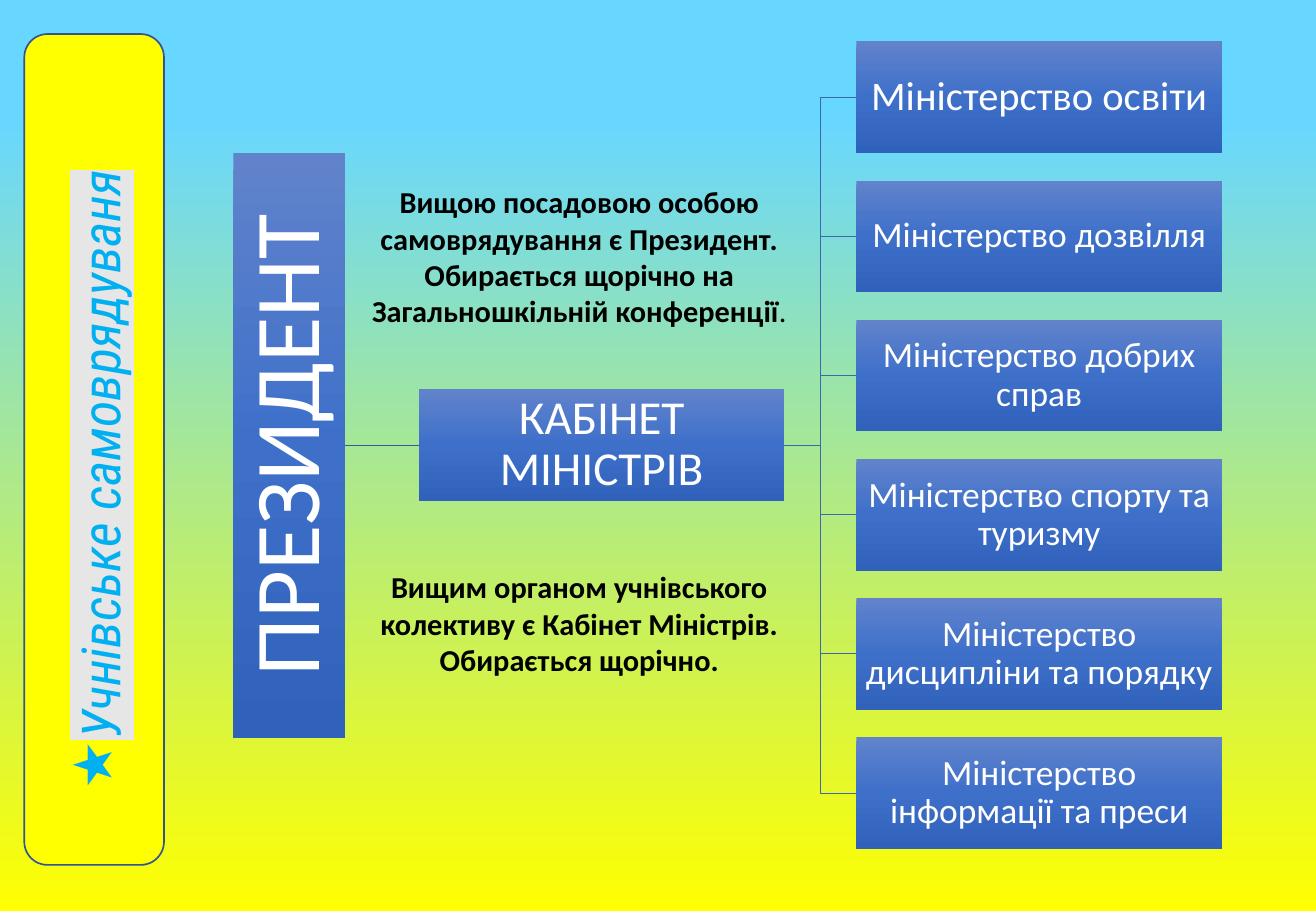
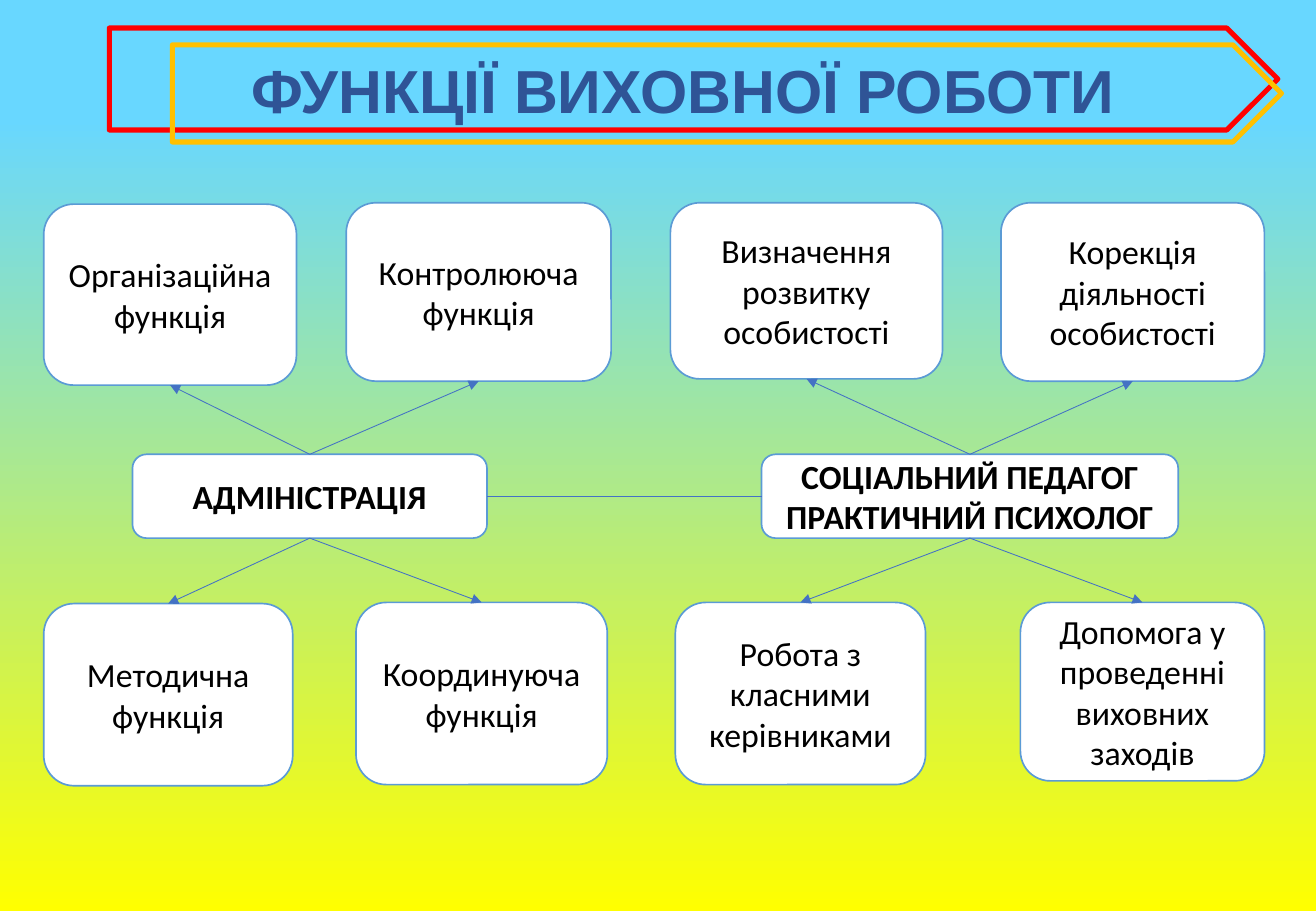
from dataclasses import dataclass

import pptx
import pptx.dml.color
import pptx.enum.dml
import pptx.enum.shapes
import pptx.enum.text
import pptx.oxml.ns
import pptx.oxml.xmlchemy
import pptx.shapes.autoshape
import pptx.shapes.connector
import pptx.slide
import pptx.text.text
import pptx.util
from lxml import etree

Pt = pptx.util.Pt
qn = pptx.oxml.ns.qn
SHAPE = pptx.enum.shapes.MSO_SHAPE
CONNECTOR = pptx.enum.shapes.MSO_CONNECTOR
ALIGN = pptx.enum.text.PP_ALIGN
ANCHOR = pptx.enum.text.MSO_ANCHOR

SKY, YELLOW, WHITE, BLACK = "68D7FF", "FFFF00", "FFFFFF", "000000"
BACKGROUND_STOPS = [(13, SKY), (100, YELLOW)]
BLOCK_STOPS = [(0, "6183CB"), (50, "3E70CA"), (100, "3062BB")]
TITLE_BLUE, BRIGHT_BLUE, HIGHLIGHT = "2F5496", "00B0F0", "E7E6E6"
CARD_LINE, ARROW_LINE = "5B9BD5", "4472C4"
TOP, LEFT, BOTTOM, RIGHT = range(4)  # connection sites of a rectangle


@dataclass(frozen=True)
class Box:
    left: float
    top: float
    width: float
    height: float

    def lengths(self) -> list[pptx.util.Length]:
        return [Pt(value) for value in (self.left, self.top, self.width, self.height)]


@dataclass(frozen=True)
class TextStyle:
    size: float
    color: str
    bold: bool = False
    italic: bool = False
    font: str = "Calibri"
    align: ALIGN = ALIGN.CENTER
    spacing: float = 1.0


@dataclass(frozen=True)
class Card:
    box: Box
    lines: tuple[str, ...]
    hub_site: int


@dataclass(frozen=True)
class Hub:
    box: Box
    lines: tuple[str, ...]
    cards: tuple[Card, ...]


BODY = TextStyle(18, BLACK, bold=True)
CARD_TEXT = TextStyle(20, BLACK)
HUB_TEXT = TextStyle(20, BLACK, bold=True)

MINISTRIES = [
    ("Міністерство освіти", 24),
    ("Міністерство дозвілля", 21),
    ("Міністерство добрих справ", 21),
    ("Міністерство спорту та туризму", 21),
    ("Міністерство дисципліни та порядку", 21),
    ("Міністерство інформації та преси", 21),
]
BLOCK_WIDTH, BLOCK_HEIGHT = 216.7, 66.2
MINISTRY_LEFT, MINISTRY_TOP, MINISTRY_STEP = 507.6, 24.5, 82.5
MIDDLE_TOP = MINISTRY_TOP + MINISTRY_STEP * (len(MINISTRIES) - 1) / 2

HUBS = [
    Hub(Box(78.5, 269.3, 210.2, 49.7), ("АДМІНІСТРАЦІЯ",), (
        Card(Box(25.9, 121, 149.8, 107.3), ("Організаційна функція",), TOP),
        Card(Box(205.2, 120.2, 157, 105.8), ("Контролююча", "функція"), TOP),
        Card(Box(25.9, 357.8, 147.6, 108), ("Методична функція",), BOTTOM),
        Card(Box(211, 357.1, 149, 108), ("Координуюча", "функція"), BOTTOM),
    )),
    Hub(Box(451.4, 269.3, 247, 49.7), ("СОЦІАЛЬНИЙ ПЕДАГОГ", "ПРАКТИЧНИЙ ПСИХОЛОГ"), (
        Card(Box(397.4, 120.2, 161.3, 104.4), ("Визначення розвитку особистості",), TOP),
        Card(Box(593.3, 120.2, 156.2, 105.8), ("Корекція діяльності особистості",), TOP),
        Card(Box(400.3, 357.1, 148.3, 108), ("Робота з класними керівниками",), BOTTOM),
        Card(Box(604.8, 357.1, 144.7, 105.8), ("Допомога у проведенні виховних заходів",), BOTTOM),
    )),
]


def rgb(color: str) -> pptx.dml.color.RGBColor:
    return pptx.dml.color.RGBColor.from_string(color)


def add_color(parent: etree.ElementBase, color: str) -> None:
    etree.SubElement(parent, qn("a:srgbClr"), val=color)


def paint_gradient(fill, owner: etree.ElementBase, stops: list[tuple[int, str]]) -> None:
    """Fill from top to bottom, whatever the rotation of the owner."""
    fill.gradient()
    fill.gradient_angle = 270
    gradient = owner.find(".//" + qn("a:gradFill"))
    gradient.set("rotWithShape", "0")
    stop_list = gradient.find(qn("a:gsLst"))
    for old_stop in list(stop_list):
        stop_list.remove(old_stop)
    for percent, color in stops:
        add_color(etree.SubElement(stop_list, qn("a:gs"), pos=str(percent * 1000)), color)


def add_run(paragraph, text: str, style: TextStyle) -> pptx.text.text._Run:
    run = paragraph.add_run()
    run.text = text
    font = run.font
    font.size, font.name = Pt(style.size), style.font
    font.bold, font.italic = style.bold, style.italic
    font.color.rgb = rgb(style.color)
    return run


def write(shape, lines: tuple[str, ...], style: TextStyle, anchor: ANCHOR = ANCHOR.MIDDLE,
          inset: float | None = None) -> None:
    frame = shape.text_frame
    frame.word_wrap = True
    frame.auto_size = pptx.enum.text.MSO_AUTO_SIZE.NONE
    frame.vertical_anchor = anchor
    if inset is not None:
        frame.margin_left = frame.margin_right = Pt(inset)
        frame.margin_top = frame.margin_bottom = Pt(inset)
    for index, line in enumerate(lines):
        paragraph = frame.add_paragraph() if index else frame.paragraphs[0]
        paragraph.alignment = style.align
        paragraph.line_spacing = style.spacing
        add_run(paragraph, line, style)


def add_shape(slide: pptx.slide.Slide, kind: SHAPE, box: Box, fill: str | None = None,
              line: str | None = None, weight: float = 1) -> pptx.shapes.autoshape.Shape:
    shape = slide.shapes.add_shape(kind, *box.lengths())
    shape.shadow.inherit = False
    if fill:
        shape.fill.solid()
        shape.fill.fore_color.rgb = rgb(fill)
    else:
        shape.fill.background()
    if line:
        shape.line.color.rgb = rgb(line)
        shape.line.width = Pt(weight)
    else:
        shape.line.fill.background()
    return shape


def add_block(slide: pptx.slide.Slide, box: Box, text: str, size: float,
              inset: float = 1) -> pptx.shapes.autoshape.Shape:
    block = add_shape(slide, SHAPE.RECTANGLE, box)
    paint_gradient(block.fill, block.element, BLOCK_STOPS)
    write(block, (text,), TextStyle(size, WHITE, spacing=0.9), inset=inset)
    return block


def add_card(slide: pptx.slide.Slide, box: Box, lines: tuple[str, ...],
             style: TextStyle) -> pptx.shapes.autoshape.Shape:
    card = add_shape(slide, SHAPE.ROUNDED_RECTANGLE, box, WHITE, CARD_LINE)
    write(card, lines, style)
    return card


def add_text(slide: pptx.slide.Slide, box: Box, lines: tuple[str, ...]):
    text_box = slide.shapes.add_textbox(*box.lengths())
    write(text_box, lines, BODY, ANCHOR.TOP)
    return text_box


def add_line(slide: pptx.slide.Slide, color: str, kind: CONNECTOR = CONNECTOR.STRAIGHT,
             ends: tuple[float, ...] = (0, 0, 0, 0),
             arrow: bool = False) -> pptx.shapes.connector.Connector:
    connector = slide.shapes.add_connector(kind, *[Pt(value) for value in ends])
    connector.line.color.rgb = rgb(color)
    connector.line.width = Pt(0.5)
    properties = connector.element.spPr
    if arrow:
        etree.SubElement(properties.find(qn("a:ln")), qn("a:tailEnd"), type="triangle")
    etree.SubElement(properties, qn("a:effectLst"))
    return connector


def glue(connector: pptx.shapes.connector.Connector, start, start_site: int,
         end, end_site: int) -> None:
    connector.begin_connect(start, start_site)
    connector.end_connect(end, end_site)


def add_titled_slide(presentation, title_box: Box) -> pptx.slide.Slide:
    slide = presentation.slides.add_slide(presentation.slide_layouts[5])
    paint_gradient(slide.background.fill, slide.element, BACKGROUND_STOPS)
    title = slide.shapes.title
    title.left, title.top, title.width, title.height = title_box.lengths()
    return slide


def build_government_slide(presentation) -> None:
    slide = add_titled_slide(presentation, Box(-178.6, 240.5, 468.7, 56.2))

    president = add_block(slide, Box(-2.1, MIDDLE_TOP, 347, BLOCK_HEIGHT), "ПРЕЗИДЕНТ", 55, 2.5)
    president.rotation = 270
    cabinet = add_block(slide, Box(248.2, MIDDLE_TOP, BLOCK_WIDTH, BLOCK_HEIGHT),
                        "КАБІНЕТ МІНІСТРІВ", 28)
    middle = MIDDLE_TOP + BLOCK_HEIGHT / 2
    add_line(slide, "365B9D", ends=(204.5, middle, 248.2, middle))
    for index, (name, size) in enumerate(MINISTRIES):
        box = Box(MINISTRY_LEFT, MINISTRY_TOP + index * MINISTRY_STEP, BLOCK_WIDTH, BLOCK_HEIGHT)
        ministry = add_block(slide, box, name, size)
        glue(add_line(slide, "3E67B2", CONNECTOR.ELBOW), cabinet, RIGHT, ministry, LEFT)

    banner = add_shape(slide, SHAPE.ROUNDED_RECTANGLE, Box(14.4, 20.2, 82.8, 492.5),
                       YELLOW, "325491")
    title = slide.shapes.title
    banner.element.addnext(title.element)
    title.rotation = 270
    style = TextStyle(32, BRIGHT_BLUE, italic=True, font="Roboto Condensed",
                      align=ALIGN.JUSTIFY, spacing=1.15)
    write(title, ("Учнівське самоврядуваня",), style, ANCHOR.TOP, 6)
    paragraph = title.text_frame.paragraphs[0]
    add_star_bullet(paragraph)
    highlight = etree.Element(qn("a:highlight"))
    add_color(highlight, HIGHLIGHT)
    paragraph.runs[0].font.fill  # keeps the colour element in place before the highlight
    title.element.find(".//" + qn("a:rPr")).find(qn("a:solidFill")).addnext(highlight)

    president_note = add_text(slide, Box(210.2, 105.1, 266.4, 94.3), (
        "Вищою посадовою особою самоврядування є Президент. "
        "Обирається щорічно на Загальношкільній конференції",))
    add_run(president_note.text_frame.paragraphs[0], ".", TextStyle(18, BLACK))
    add_text(slide, Box(210.2, 333.4, 266.4, 72.7), (
        "Вищим органом учнівського колективу є Кабінет Міністрів.", "Обирається щорічно."))


def add_star_bullet(paragraph) -> None:
    properties = paragraph._p.get_or_add_pPr()
    properties.set("marL", str(Pt(58.3)))
    properties.set("indent", str(Pt(-29.5)))
    add_color(etree.SubElement(properties, qn("a:buClr")), BRIGHT_BLUE)
    etree.SubElement(properties, qn("a:buChar"), char="★")


def build_functions_slide(presentation) -> None:
    slide = add_titled_slide(presentation, Box(82.1, 32.4, 645.8, 45.4))
    write(slide.shapes.title, ("ФУНКЦІЇ ВИХОВНОЇ РОБОТИ",),
          TextStyle(36, TITLE_BLUE, bold=True, font="Arial", spacing=0.9), ANCHOR.TOP)
    add_shape(slide, SHAPE.PENTAGON, Box(64.8, 16.6, 692.6, 60.5), line="FF0000", weight=3)
    add_shape(slide, SHAPE.PENTAGON, Box(102.2, 26.6, 657.4, 57.6), line="FFC000", weight=3)

    hub_shapes = []
    for hub in HUBS:
        hub_shape = add_card(slide, hub.box, hub.lines, HUB_TEXT)
        hub_shapes.append(hub_shape)
        for card in hub.cards:
            card_shape = add_card(slide, card.box, card.lines, CARD_TEXT)
            card_site = BOTTOM if card.hub_site == TOP else TOP
            glue(add_line(slide, ARROW_LINE, arrow=True),
                 hub_shape, card.hub_site, card_shape, card_site)
    glue(add_line(slide, ARROW_LINE), hub_shapes[0], RIGHT, hub_shapes[1], LEFT)


def main() -> None:
    presentation = pptx.Presentation()
    presentation.slide_width, presentation.slide_height = Pt(780), Pt(540)
    build_government_slide(presentation)
    build_functions_slide(presentation)
    presentation.save("out.pptx")


if __name__ == "__main__":
    main()
